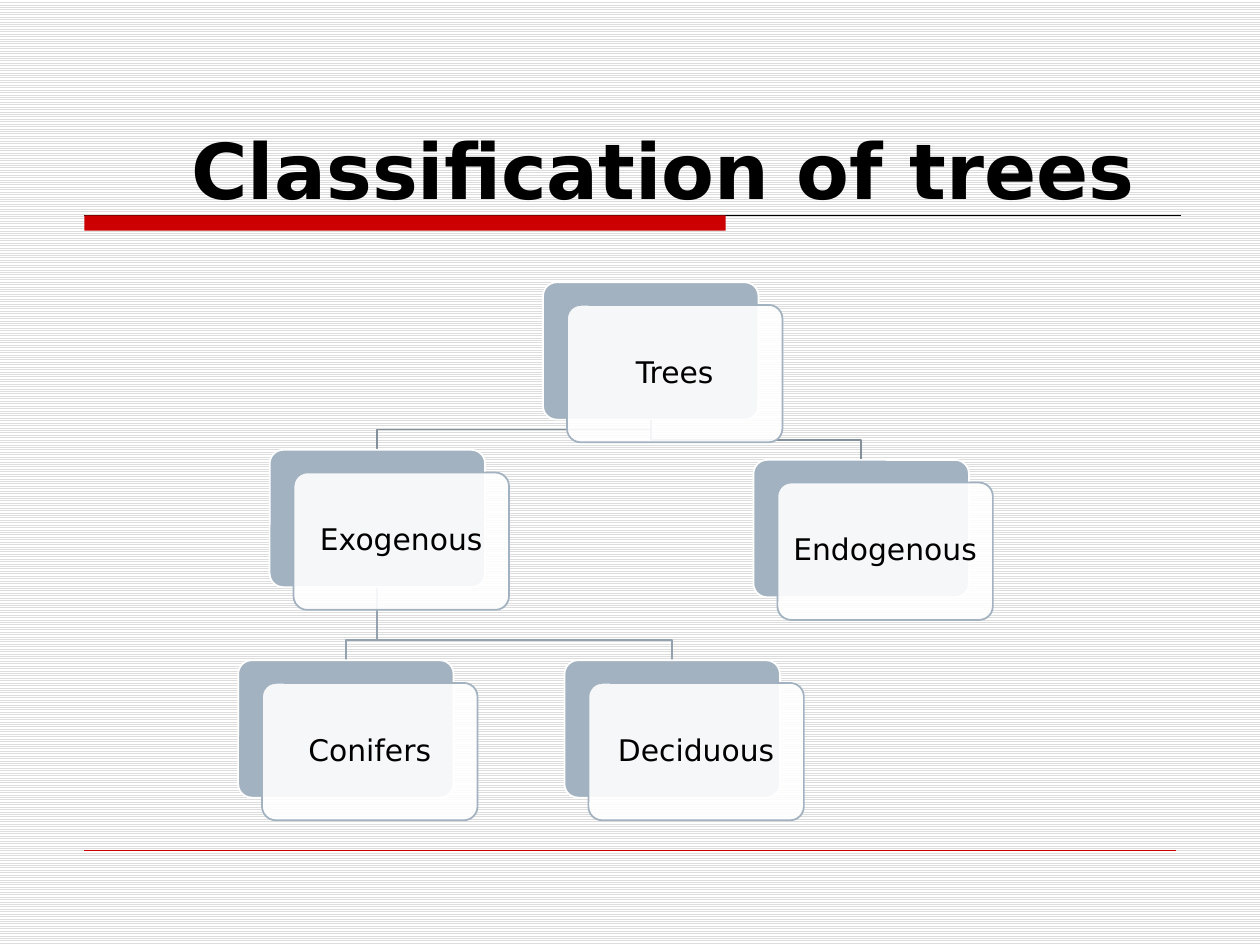
from dataclasses import dataclass

from lxml import etree
from pptx import Presentation
from pptx import util as u
from pptx.dml.color import RGBColor
from pptx.enum import dml, shapes, text
from pptx.oxml.ns import qn


@dataclass(frozen=True)
class Theme:
    font: str = "DejaVu Sans"
    ink: str = "000000"
    paper: str = "FFFFFF"
    stripe: str = "DDDDDD"
    accent: str = "CC0000"
    card: str = "A3B2C1"
    upper_branch: str = "838F9B"
    lower_branch: str = "94A2AF"
    title_size: int = 44
    label_size: int = 17


CARD_W, CARD_H = 1.71, 1.09
OFFSET_X, OFFSET_Y = 0.19, 0.18
ELBOW_RISE = 0.16

# Left and top of each back card
NODES = {
    "Trees": (4.31, 2.24),
    "Exogenous": (2.14, 3.57),
    "Conifers": (1.89, 5.24),
    "Deciduous": (4.48, 5.24),
    "Endogenous": (5.98, 3.65),
}
BRANCHES = [
    ("Trees", "Endogenous"),
    ("Exogenous", "Deciduous"),
    ("Exogenous", "Conifers"),
    ("Trees", "Exogenous"),
]


def rgb(value):
    return RGBColor.from_string(value)


class TreeSlide:
    def __init__(self, slide, theme):
        self.slide, self.theme = slide, theme

    def background(self):
        fill = self.slide.background.fill
        fill.patterned()
        fill.pattern = dml.MSO_PATTERN.LIGHT_HORIZONTAL
        fill.fore_color.rgb = rgb(self.theme.stripe)
        fill.back_color.rgb = rgb(self.theme.paper)

    def run(self, paragraph, words, size, bold=False):
        run = paragraph.add_run()
        run.text = words
        run.font.name = self.theme.font
        run.font.size = u.Pt(size)
        run.font.bold = bold
        run.font.color.rgb = rgb(self.theme.ink)

    def title(self, words, left, top, width, height):
        title = self.slide.shapes.title
        title.left, title.top = u.Inches(left), u.Inches(top)
        title.width, title.height = u.Inches(width), u.Inches(height)
        frame = title.text_frame
        frame.auto_size = text.MSO_AUTO_SIZE.NONE
        frame.vertical_anchor = text.MSO_ANCHOR.TOP
        paragraph = frame.paragraphs[0]
        paragraph.alignment = text.PP_ALIGN.LEFT
        self.run(paragraph, words, self.theme.title_size, bold=True)

    def box(self, kind, left, top, width, height, fill, line=None):
        box = self.slide.shapes.add_shape(
            kind, u.Inches(left), u.Inches(top), u.Inches(width), u.Inches(height))
        box.shadow.inherit = False
        box.fill.solid()
        box.fill.fore_color.rgb = rgb(fill)
        if line:
            box.line.color.rgb = rgb(line)
            box.line.width = u.Pt(1)
        else:
            box.line.fill.background()
        return box

    def rule(self, left, right, y, color, weight):
        rule = self.slide.shapes.add_connector(
            shapes.MSO_CONNECTOR.STRAIGHT,
            u.Inches(left), u.Inches(y), u.Inches(right), u.Inches(y))
        rule.line.color.rgb = rgb(color)
        rule.line.width = u.Pt(weight)
        etree.SubElement(rule._element.spPr, qn("a:effectLst"))

    def branch(self, parent, child, color):
        """Draw the elbow from the foot of one back card to the head of another."""
        start_x, end_x = parent[0] + CARD_W / 2, child[0] + CARD_W / 2
        start_y, end_y = parent[1] + CARD_H, child[1]
        elbow_y = end_y - ELBOW_RISE
        builder = self.slide.shapes.build_freeform(u.Inches(start_x), u.Inches(start_y))
        corners = [(start_x, elbow_y), (end_x, elbow_y), (end_x, end_y)]
        builder.add_line_segments(
            [(u.Inches(x), u.Inches(y)) for x, y in corners], close=False)
        elbow = builder.convert_to_shape()
        elbow.shadow.inherit = False
        elbow.fill.background()
        elbow.line.color.rgb = rgb(color)
        elbow.line.width = u.Pt(1)

    def node(self, label, left, top):
        """Draw a solid back card with a translucent labelled card over it."""
        theme, rounded = self.theme, shapes.MSO_SHAPE.ROUNDED_RECTANGLE
        back = self.box(rounded, left, top, CARD_W, CARD_H, theme.card, theme.paper)
        front = self.box(rounded, left + OFFSET_X, top + OFFSET_Y, CARD_W, CARD_H,
                         theme.paper, theme.card)
        for card in (back, front):
            card.adjustments[0] = 0.1
        color = front._element.spPr.find(qn("a:solidFill"))[0]
        etree.SubElement(color, qn("a:alpha"), val="90000")

        frame = front.text_frame
        frame.word_wrap = True
        frame.vertical_anchor = text.MSO_ANCHOR.MIDDLE
        frame.margin_left = frame.margin_right = u.Inches(0.07)
        frame.margin_top = frame.margin_bottom = u.Inches(0.07)
        paragraph = frame.paragraphs[0]
        paragraph.alignment = text.PP_ALIGN.CENTER
        paragraph.line_spacing = 0.9
        self.run(paragraph, label, theme.label_size)


def main():
    deck = Presentation()
    deck.slide_width, deck.slide_height = u.Inches(10), u.Inches(7.5)
    theme = Theme()
    title_only = deck.slide_layouts[5]
    page = TreeSlide(deck.slides.add_slide(title_only), theme)

    page.background()
    page.rule(0.67, 9.37, 1.71, theme.ink, 0.75)
    page.box(shapes.MSO_SHAPE.RECTANGLE, 0.67, 1.71, 5.09, 0.12, theme.accent)
    page.rule(0.67, 9.33, 6.75, theme.accent, 0.25)
    page.title("Classification of trees", 1.42, 0.92, 7.75, 0.84)

    for parent, child in BRANCHES:
        color = theme.upper_branch if parent == "Trees" else theme.lower_branch
        page.branch(NODES[parent], NODES[child], color)
    for label, (left, top) in NODES.items():
        page.node(label, left, top)

    deck.save("out.pptx")


if __name__ == "__main__":
    main()
